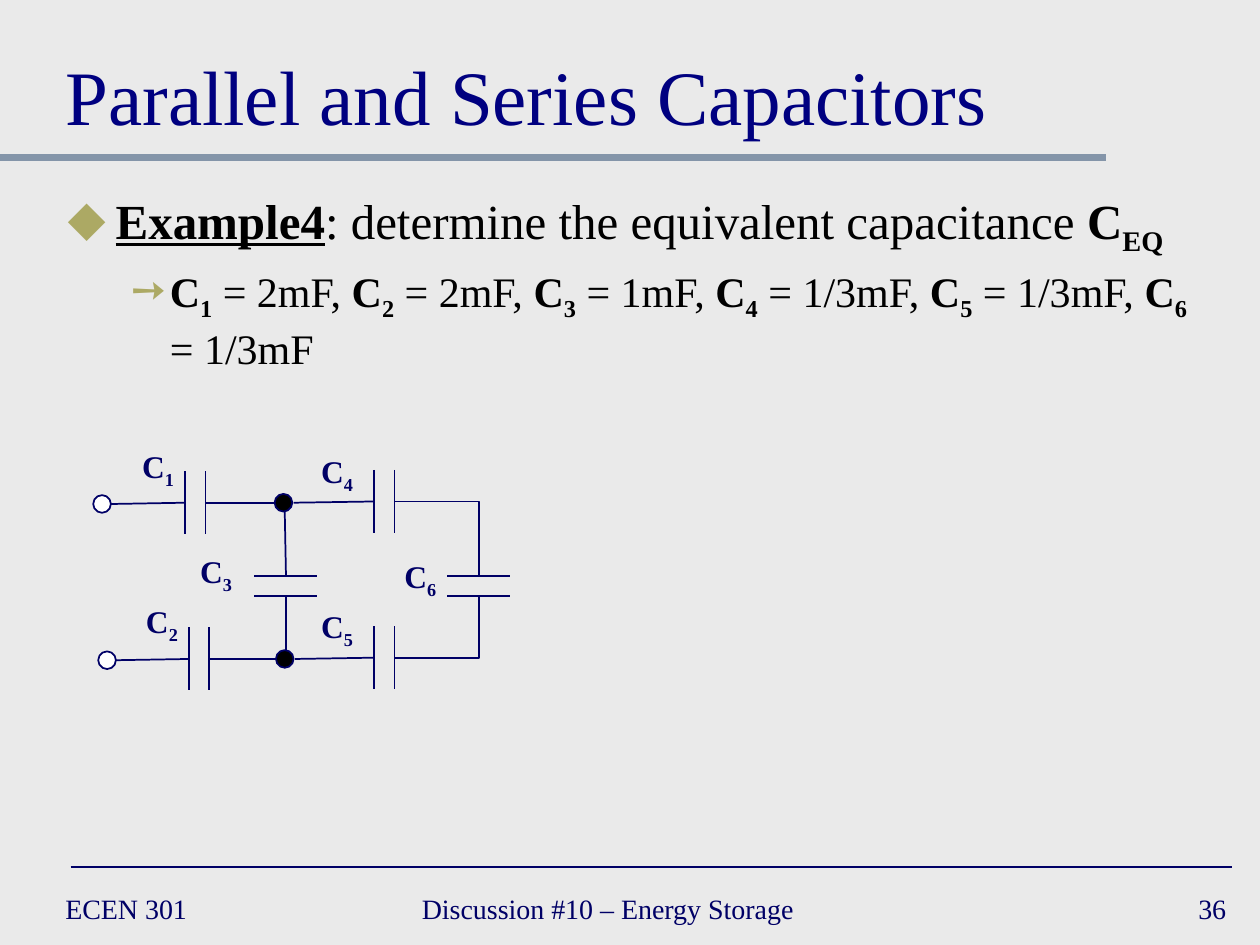
from dataclasses import dataclass

from lxml import etree
from pptx import Presentation
from pptx.dml.color import RGBColor
from pptx.enum.shapes import MSO_CONNECTOR, MSO_SHAPE
from pptx.enum.text import MSO_ANCHOR, PP_ALIGN
from pptx.oxml.ns import qn
from pptx.util import Inches, Pt

STRAIGHT, ELBOW = MSO_CONNECTOR.STRAIGHT, MSO_CONNECTOR.ELBOW
OVAL = MSO_SHAPE.OVAL
LEFT, CENTER, RIGHT = PP_ALIGN.LEFT, PP_ALIGN.CENTER, PP_ALIGN.RIGHT
TOP, MIDDLE, BOTTOM = MSO_ANCHOR.TOP, MSO_ANCHOR.MIDDLE, MSO_ANCHOR.BOTTOM


@dataclass(frozen=True)
class Theme:
    """Colours, font and type sizes of the slide."""
    font: str = "Times New Roman"
    paper: str = "EAEAEA"
    title: str = "000080"
    ink: str = "000066"
    black: str = "000000"
    white: str = "FFFFFF"
    rule: str = "8495A9"
    bullet: str = "ACA964"
    title_size: int = 44
    body_size: int = 28
    detail_size: int = 24
    label_size: int = 18
    footer_size: int = 16


THEME = Theme()
PLATE = 0.5
GAP = 0.16
CAPACITANCES = ["2mF", "2mF", "1mF", "1/3mF", "1/3mF", "1/3mF"]
LABELS = [(0.96, 3.5), (0.99, 4.73), (1.42, 4.33), (2.38, 3.54), (2.38, 4.77), (3.04, 4.37)]
CAPACITORS = [(1.55, 3.99, True), (1.58, 5.23, True), (2.27, 4.65, False),
              (3.05, 3.98, True), (3.05, 5.22, True), (3.8, 4.65, False)]
WIRES = [((0.88, 4), (1.47, 3.99)), ((2.19, 3.99), (1.63, 3.99)),
         ((0.92, 5.24), (1.5, 5.23)), ((2.2, 5.23), (1.66, 5.23)),
         ((2.27, 5.16), (2.27, 4.73)), ((2.26, 4.06), (2.27, 4.57)),
         ((2.33, 3.99), (2.97, 3.98)), ((2.34, 5.23), (2.97, 5.22))]
CORNERS = [((3.13, 3.98), (3.8, 4.57)), ((3.13, 5.22), (3.8, 4.73))]
NODES = [(0.74, 3.93, THEME.white), (0.78, 5.17, THEME.white),
         (2.18, 3.92, THEME.black), (2.19, 5.16, THEME.black)]


def rgb(value):
    """Turn a hex string into a colour."""
    return RGBColor.from_string(value)


def write(paragraph, text, *, size, color, bold=False, underline=False, subscript=False):
    """Add one formatted run of text to a paragraph."""
    run = paragraph.add_run()
    run.text = text
    font = run.font
    font.name, font.size, font.bold = THEME.font, Pt(size), bold
    font.underline = underline
    font.color.rgb = rgb(color)
    if subscript:
        font._element.set("baseline", "-25000")


def write_symbol(paragraph, index, **style):
    """Write a bold capacitor symbol with its subscript."""
    write(paragraph, "C", bold=True, **style)
    write(paragraph, str(index), bold=True, subscript=True, **style)


def add_box(slide, left, top, width, height, *, align=LEFT, anchor=TOP, wrap=False):
    """Add a text box and return its text frame."""
    frame = slide.shapes.add_textbox(*map(Inches, (left, top, width, height))).text_frame
    frame.word_wrap, frame.vertical_anchor = wrap, anchor
    frame.paragraphs[0].alignment = align
    return frame


def add_wire(slide, start, end, color=THEME.ink, width=1, kind=STRAIGHT):
    """Draw a connector; an elbow runs level first, then turns once."""
    wire = slide.shapes.add_connector(kind, *map(Inches, (*start, *end)))
    wire.line.color.rgb, wire.line.width = rgb(color), Pt(width)
    properties = wire._element.spPr
    etree.SubElement(properties, qn("a:effectLst"))
    if kind == ELBOW:
        properties.find(qn("a:prstGeom")).set("prst", "bentConnector2")


def add_capacitor(slide, x, y, upright):
    """Draw two parallel plates centred on a point."""
    for offset in (-GAP / 2, GAP / 2):
        if upright:
            start, end = (x + offset, y - PLATE / 2), (x + offset, y + PLATE / 2)
        else:
            start, end = (x - PLATE / 2, y + offset), (x + PLATE / 2, y + offset)
        add_wire(slide, start, end)


def add_node(slide, left, top, fill):
    """Draw a terminal or a junction of the circuit."""
    node = slide.shapes.add_shape(OVAL, *map(Inches, (left, top, 0.14, 0.14)))
    node.shadow.inherit = False
    node.fill.solid()
    node.fill.fore_color.rgb = rgb(fill)
    node.line.color.rgb, node.line.width = rgb(THEME.ink), Pt(1)


def set_bullet(paragraph, symbol, margin, indent):
    """Give a paragraph a coloured bullet with a hanging indent."""
    properties = paragraph._p.get_or_add_pPr()
    properties.set("marL", str(Inches(margin)))
    properties.set("indent", str(Inches(indent)))
    color = etree.SubElement(properties, qn("a:buClr"))
    etree.SubElement(color, qn("a:srgbClr"), val=THEME.bullet)
    etree.SubElement(properties, qn("a:buChar"), char=symbol)


def add_title(slide, text):
    """Place and fill the title."""
    title = slide.shapes.title
    title.left, title.top, title.width, title.height = map(Inches, (0.42, 0.17, 9.17, 1))
    title.text_frame.vertical_anchor = BOTTOM
    paragraph = title.text_frame.paragraphs[0]
    paragraph.alignment = LEFT
    write(paragraph, text, size=THEME.title_size, color=THEME.title)


def add_problem(slide):
    """Write the task and the given capacitances."""
    frame = add_box(slide, 0.44, 1.46, 9.14, 1.54, wrap=True)
    task, values = frame.paragraphs[0], frame.add_paragraph()
    set_bullet(task, "◆", 0.38, -0.38)
    style = {"size": THEME.body_size, "color": THEME.black}
    write(task, "Example4", bold=True, underline=True, **style)
    write(task, ": determine the equivalent capacitance ", **style)
    write_symbol(task, "EQ", **style)

    values.level = 1
    set_bullet(values, "➙", 0.81, -0.31)
    values.space_before = Pt(4.8)
    style["size"] = THEME.detail_size
    for index, capacitance in enumerate(CAPACITANCES, 1):
        write_symbol(values, index, **style)
        ending = ", " if index < len(CAPACITANCES) else ""
        write(values, f" = {capacitance}{ending}", **style)


def add_circuit(slide):
    """Draw the capacitor network with its labels."""
    for start, end in WIRES:
        add_wire(slide, start, end)
    for start, end in CORNERS:
        add_wire(slide, start, end, kind=ELBOW)
    for capacitor in CAPACITORS:
        add_capacitor(slide, *capacitor)
    for node in NODES:
        add_node(slide, *node)
    for index, (left, top) in enumerate(LABELS, 1):
        label = add_box(slide, left, top, 0.59, 0.4, align=CENTER)
        write_symbol(label.paragraphs[0], index, size=THEME.label_size, color=THEME.ink)


def add_footer(slide):
    """Write the course, the topic and the page number."""
    for text, left, width, align in (("ECEN 301", 0.42, 2.17, LEFT),
                                     ("Discussion #10 – Energy Storage", 3.25, 3.83, LEFT),
                                     ("36", 7.75, 2.08, RIGHT)):
        frame = add_box(slide, left, 7, width, 0.42, align=align, anchor=MIDDLE, wrap=True)
        write(frame.paragraphs[0], text, size=THEME.footer_size, color=THEME.ink)


def main():
    """Build the slide and save it."""
    deck = Presentation()
    deck.slide_width, deck.slide_height = Inches(10), Inches(7.5)
    slide = deck.slides.add_slide(deck.slide_layouts[5])
    slide.background.fill.solid()
    slide.background.fill.fore_color.rgb = rgb(THEME.paper)
    add_wire(slide, (0, 1.25), (8.78, 1.25), color=THEME.rule, width=4)
    add_wire(slide, (0.56, 6.88), (9.78, 6.88))
    add_title(slide, "Parallel and Series Capacitors")
    add_problem(slide)
    add_circuit(slide)
    add_footer(slide)
    deck.save("out.pptx")


if __name__ == "__main__":
    main()
